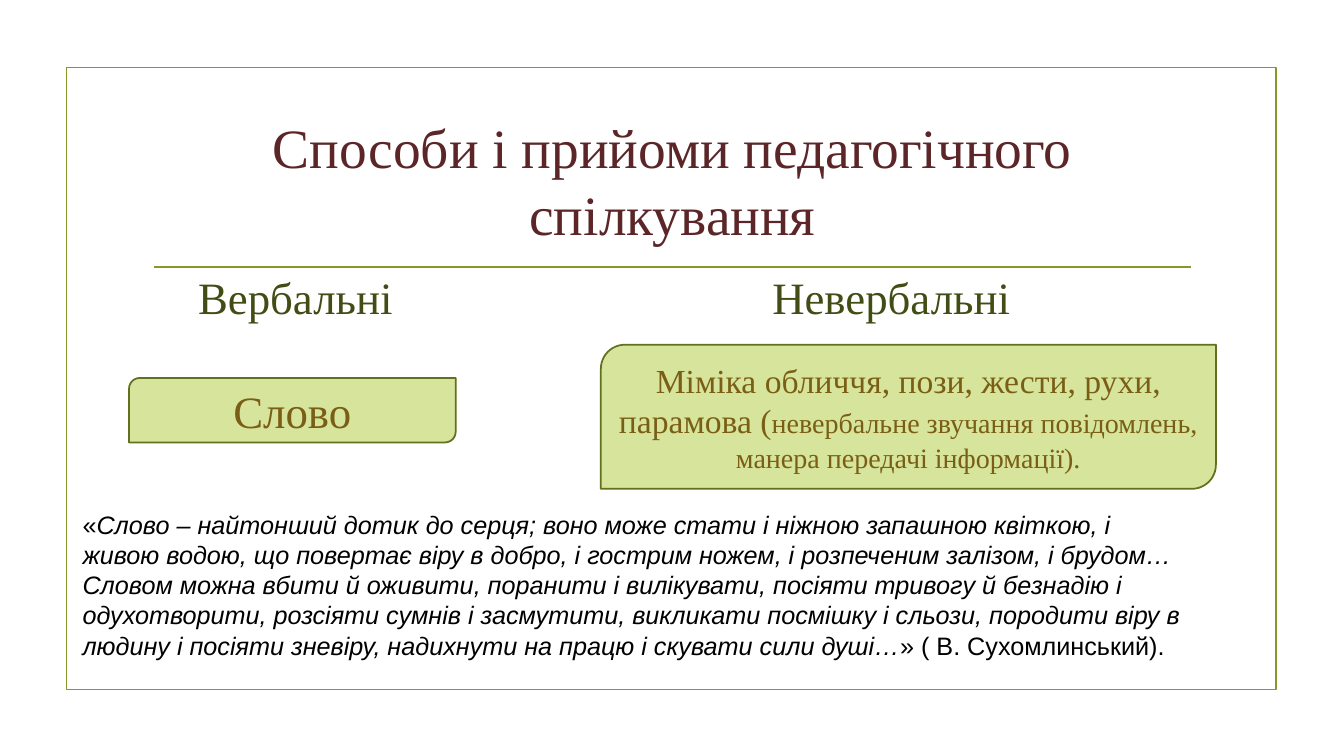
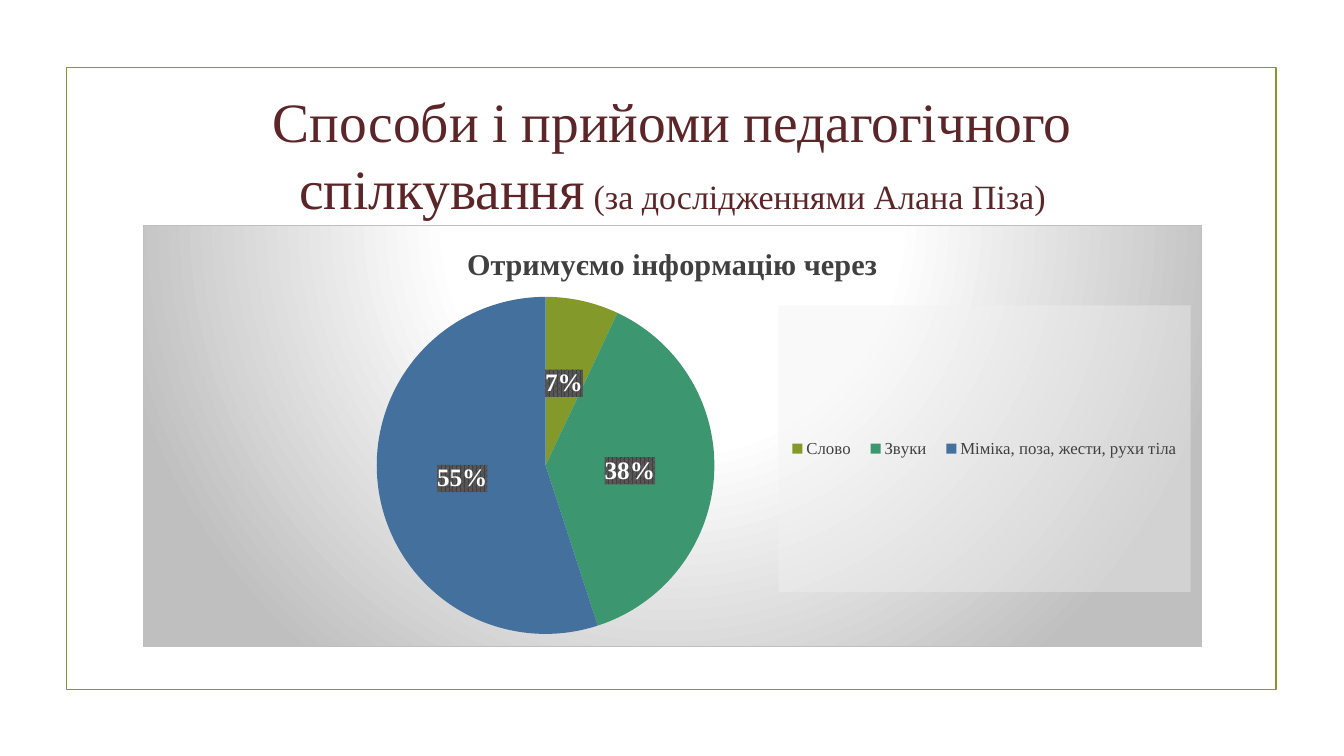
"""Two slides on the ways and means of pedagogical communication."""
from lxml import etree
from pptx import Presentation
from pptx import util as u
from pptx.chart.data import CategoryChartData
from pptx.dml.color import RGBColor
from pptx.enum import chart as ch, shapes, text
from pptx.oxml import parse_xml
from pptx.oxml.ns import nsdecls, qn

SERIF, SANS = "Times New Roman", "Arial"
OLIVE = RGBColor(0x83, 0x99, 0x2A)
DARK_OLIVE = RGBColor(0x61, 0x71, 0x1F)
PALE_OLIVE = RGBColor(0xD6, 0xE4, 0x9C)
HEADING_GREEN = RGBColor(0x41, 0x4D, 0x15)
BROWN = RGBColor(0x7A, 0x5E, 0x15)
MAROON = RGBColor(0x5C, 0x26, 0x29)
GREEN = RGBColor(0x3C, 0x97, 0x70)
BLUE = RGBColor(0x44, 0x70, 0x9D)
GRAY = RGBColor(0x40, 0x40, 0x40)
BLACK = RGBColor(0, 0, 0)
WHITE = RGBColor(0xFF, 0xFF, 0xFF)

TITLE = "Способи і прийоми педагогічного спілкування"
SOURCE = " (за дослідженнями Алана Піза)"
WAYS = [
    ("Вербальні", 0.79, (1.28, 3.75, 3.24, 0.64), [("Слово", 32)]),
    ("Невербальні", 6.7, (5.96, 3.42, 6.1, 1.43), [
        ("Міміка обличчя, пози, жести, рухи, парамова (", 24),
        ("невербальне звучання повідомлень, манера передачі інформації).", 20)]),
]
QUOTE = [
    ("«", False),
    ("Слово – найтонший дотик до серця; воно може стати і ніжною запашною "
     "квіткою, і живою водою, що повертає віру в добро, і гострим ножем, і "
     "розпеченим залізом, і брудом… Словом можна вбити й оживити, поранити і "
     "вилікувати, посіяти тривогу й безнадію і одухотворити, розсіяти сумнів і "
     "засмутити, викликати посмішку і сльози, породити віру в людину і посіяти "
     "зневіру, надихнути на працю і скувати сили душі…", True),
    ("» ( В. Сухомлинський).", False),
]
CHART_TITLE = "Отримуємо інформацію через"
CHANNELS = [("Слово", 7, OLIVE), ("Звуки", 38, GREEN),
            ("Міміка, поза, жести, рухи тіла", 55, BLUE)]

CONTENT_LEFT, CONTENT_WIDTH = 1.42, 10.5
FRAME = (0.66, 0.67, 12, 6.17)
PLOT_SHARE = (0.22, 0.17, 0.32, 0.8)
LEGEND_SHARE = (0.6, 0.19, 0.39, 0.68)

BACKDROP = f"""<a:gradFill {nsdecls('a')}><a:gsLst>
<a:gs pos="0"><a:srgbClr val="FFFFFF"/></a:gs>
<a:gs pos="39000"><a:srgbClr val="FFFFFF"/></a:gs>
<a:gs pos="100000"><a:srgbClr val="BFBFBF"/></a:gs></a:gsLst>
<a:path path="circle"><a:fillToRect l="50000" t="-80000" r="50000" b="180000"/></a:path>
</a:gradFill>"""
BACKDROP_LINE = f"""<a:ln {nsdecls('a')} w="9525"><a:solidFill>
<a:srgbClr val="BFBFBF"/></a:solidFill></a:ln>"""
LEGEND_FILL = f"""<a:solidFill {nsdecls('a')}><a:srgbClr val="F2F2F2">
<a:alpha val="39000"/></a:srgbClr></a:solidFill>"""
LABEL_FILL = f"""<a:pattFill {nsdecls('a')} prst="pct75">
<a:fgClr><a:srgbClr val="404040"/></a:fgClr>
<a:bgClr><a:srgbClr val="595959"/></a:bgClr></a:pattFill>"""


def inches(box):
    return [u.Inches(length) for length in box]


def style(font, size, color, name=SERIF, bold=False):
    font.size, font.name, font.bold = u.Pt(size), name, bold
    font.color.rgb = color


def add_runs(paragraph, sized_runs):
    for words, size in sized_runs:
        run = paragraph.add_run()
        run.text = words
        run.font.size = u.Pt(size)


def outline(shape, color):
    shape.line.color.rgb = color
    shape.line.width = u.Pt(1.25)


def add_framed_slide(prs, title_top, title_runs):
    slide = prs.slides.add_slide(prs.slide_layouts[5])
    title = slide.shapes.title
    title.left, title.top, title.width, title.height = inches(
        (CONTENT_LEFT, title_top, CONTENT_WIDTH, 1.43))
    frame = title.text_frame
    frame.auto_size = text.MSO_AUTO_SIZE.NONE
    frame.vertical_anchor = text.MSO_ANCHOR.MIDDLE
    heading = frame.paragraphs[0]
    heading.alignment = text.PP_ALIGN.CENTER
    style(heading.font, 39.6, MAROON)
    add_runs(heading, title_runs)

    border = slide.shapes.add_shape(shapes.MSO_SHAPE.RECTANGLE, *inches(FRAME))
    border.shadow.inherit = False
    border.fill.background()
    outline(border, OLIVE)
    return slide


def add_text(slide, box):
    frame = slide.shapes.add_textbox(*inches(box)).text_frame
    frame.word_wrap = True
    return frame.paragraphs[0]


def add_way(slide, name, left, box, examples):
    heading = add_text(slide, (left, 2.63, 4.28, 0.64))
    heading.text = name
    heading.alignment = text.PP_ALIGN.CENTER
    style(heading.font, 32, HEADING_GREEN)

    card = slide.shapes.add_shape(
        shapes.MSO_SHAPE.ROUND_2_DIAG_RECTANGLE, *inches(box))
    card.shadow.inherit = False
    card.fill.solid()
    card.fill.fore_color.rgb = PALE_OLIVE
    outline(card, DARK_OLIVE)
    card.text_frame.vertical_anchor = text.MSO_ANCHOR.MIDDLE
    body = card.text_frame.paragraphs[0]
    body.alignment = text.PP_ALIGN.CENTER
    style(body.font, 24, BROWN)
    add_runs(body, examples)


def build_ways(prs):
    slide = add_framed_slide(prs, 1.07, [(TITLE, 39.6)])
    rule = slide.shapes.add_connector(
        shapes.MSO_CONNECTOR.STRAIGHT, *inches((1.53, 2.65, 11.81, 2.65)))
    outline(rule, OLIVE)
    etree.SubElement(rule._element.spPr, qn("a:effectLst"))
    for way in WAYS:
        add_way(slide, *way)

    quote = add_text(slide, (0.72, 5, 11.19, 1.62))
    style(quote.font, 18, BLACK, SANS)
    for words, italic in QUOTE:
        run = quote.add_run()
        run.text = words
        run.font.italic = italic


def manual_layout(share, inner=False):
    target = '<c:layoutTarget val="inner"/>' if inner else ""
    modes = "".join(f'<c:{axis}Mode val="edge"/>' for axis in "xy")
    sizes = "".join(f'<c:{key} val="{value}"/>' for key, value in zip("xywh", share))
    return parse_xml(f"<c:layout {nsdecls('c')}><c:manualLayout>{target}{modes}"
                     f"{sizes}</c:manualLayout></c:layout>")


def set_layout(parent, layout, after=None):
    for old in parent.findall(qn("c:layout")):
        parent.remove(old)
    if after is None:
        parent.insert(0, layout)
    else:
        after.addnext(layout)


def shape_properties(*parts):
    properties = parse_xml(f"<c:spPr {nsdecls('c', 'a')}/>")
    for part in parts:
        properties.append(parse_xml(part))
    return properties


def build_channels(prs):
    slide = add_framed_slide(prs, 0.81, [(TITLE, 39.6), (SOURCE, 24.3)])
    data = CategoryChartData()
    data.categories = [name for name, _, _ in CHANNELS]
    data.add_series("Series 1", [share for _, share, _ in CHANNELS])
    chart = slide.shapes.add_chart(
        ch.XL_CHART_TYPE.PIE,
        *inches((CONTENT_LEFT, 2.23, CONTENT_WIDTH, 4.19)), data).chart
    style(chart.font, 10, BLACK)

    chart.has_title = True
    caption = chart.chart_title.text_frame.paragraphs[0]
    caption.text = CHART_TITLE
    style(caption.font, 21.6, GRAY, bold=True)

    pie = chart.plots[0]
    pie.vary_by_categories = True
    for index, (_, _, color) in enumerate(CHANNELS):
        fill = pie.series[0].points[index].format.fill
        fill.solid()
        fill.fore_color.rgb = color

    labels = pie.series[0].data_labels
    labels.show_percentage = True
    labels.show_value = False
    labels.number_format, labels.number_format_is_linked = "0%", False
    labels.position = ch.XL_LABEL_POSITION.CENTER
    style(labels.font, 18, WHITE, bold=True)
    labels._element.find(qn("c:txPr")).addprevious(shape_properties(LABEL_FILL))

    chart.has_legend = True
    legend = chart.legend
    legend.position = ch.XL_LEGEND_POSITION.RIGHT
    legend.include_in_layout = False
    style(legend.font, 12, GRAY)
    key = legend._element
    set_layout(key, manual_layout(LEGEND_SHARE), key.find(qn("c:legendPos")))
    key.find(qn("c:txPr")).addprevious(shape_properties(LEGEND_FILL))

    space = chart._chartSpace
    set_layout(space.chart.plotArea, manual_layout(PLOT_SHARE, inner=True))
    space.chart.addnext(shape_properties(BACKDROP, BACKDROP_LINE))


def main():
    prs = Presentation()
    prs.slide_width, prs.slide_height = inches((13.33, 7.5))
    build_ways(prs)
    build_channels(prs)
    prs.save("out.pptx")


if __name__ == "__main__":
    main()
